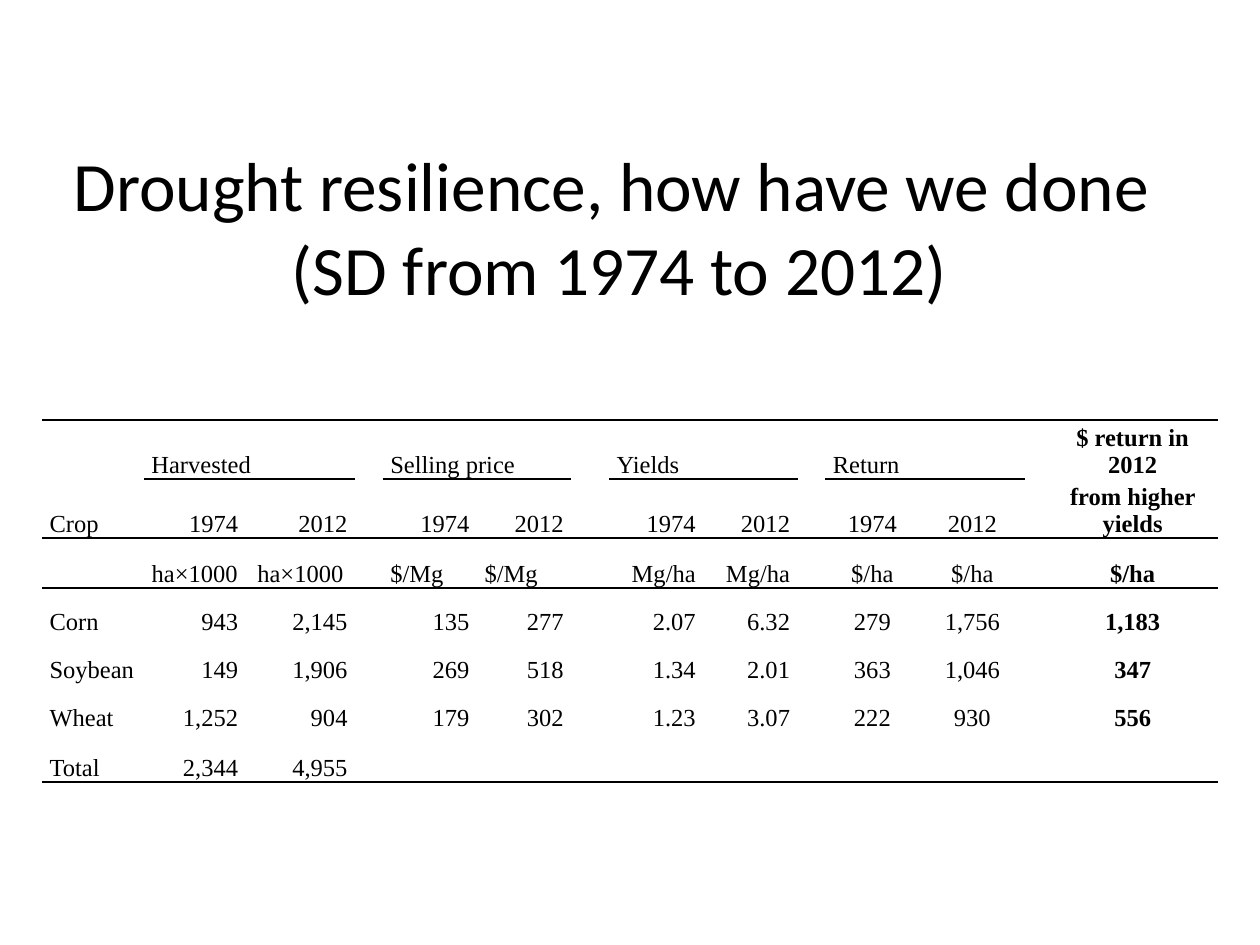
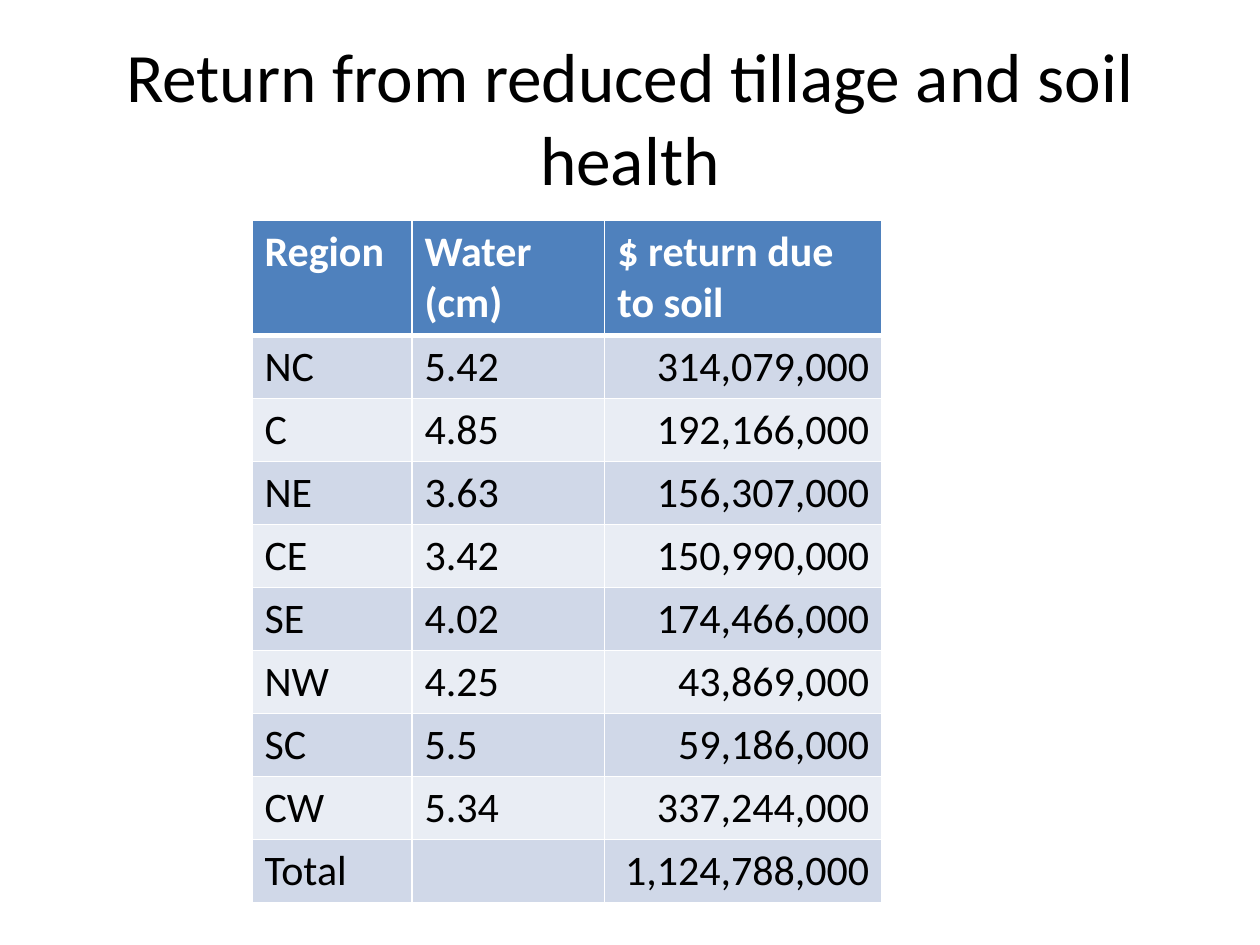
from lxml import etree
from pptx import Presentation
from pptx.dml.color import RGBColor
from pptx.enum.text import MSO_ANCHOR, PP_ALIGN
from pptx.oxml.ns import qn
from pptx.util import Inches, Pt

ALIGN = {"l": PP_ALIGN.LEFT, "c": PP_ALIGN.CENTER, "r": PP_ALIGN.RIGHT}
TOP, MIDDLE, BOTTOM = MSO_ANCHOR.TOP, MSO_ANCHOR.MIDDLE, MSO_ANCHOR.BOTTOM

COLORS = {
    "ink": "000000",
    "paper": "FFFFFF",
    "header": "4F81BD",
    "band_dark": "D0D8E8",
    "band_light": "E9EDF4",
}
SANS, SERIF = "Calibri", "Times New Roman"
TITLE_SIZE = 39.6
PLAIN_TABLE_STYLE = "{2D5ABB26-0587-4C30-8999-92F81FD0307C}"

SLIDE_WIDTH, SLIDE_HEIGHT = Inches(10), Inches(7.5)
GRID_COLUMNS, GRID_ROWS = 120, 90

CROP_WIDTHS = [0.81, 0.81, 0.87, 0.22, 0.75, 0.75, 0.3,
               0.75, 0.75, 0.22, 0.75, 0.84, 0.18, 1.35]
CROP_HEIGHTS = [0.43, 0.43, 0.4, 0.38, 0.38, 0.38, 0.4]
CROP_COLUMNS = [0, 1, 2, 4, 5, 7, 8, 10, 11, 13]
GROUPED_COLUMNS = CROP_COLUMNS[1:-1]
MERGED_STARTS = [1, 4]
NUMBER_ALIGN = "lrrrrrrccc"
CROP_ROWS = [
    ("lllllllllc", ["", "Harvested", "", "Selling price", "", "Yields", "",
                    "Return", "", "$ return in 2012"]),
    (NUMBER_ALIGN, ["Crop"] + ["1974", "2012"] * 4 + ["from higher yields"]),
    ("lccllrrccc", ["", "ha×1000", "ha×1000", "$/Mg", "$/Mg", "Mg/ha", "Mg/ha",
                    "$/ha", "$/ha", "$/ha"]),
    (NUMBER_ALIGN, ["Corn", "943", "2,145", "135", "277", "2.07", "6.32",
                    "279", "1,756", "1,183"]),
    (NUMBER_ALIGN, ["Soybean", "149", "1,906", "269", "518", "1.34", "2.01",
                    "363", "1,046", "347"]),
    (NUMBER_ALIGN, ["Wheat", "1,252", "904", "179", "302", "1.23", "3.07",
                    "222", "930", "556"]),
    (NUMBER_ALIGN, ["Total", "2,344", "4,955"]),
]

REGION_WIDTHS = [1.27, 1.53, 2.2]
REGION_ROWS = [
    ("Region", "Water (cm)", "$ return due to soil"),
    ("NC", "5.42", "314,079,000"),
    ("C", "4.85", "192,166,000"),
    ("NE", "3.63", "156,307,000"),
    ("CE", "3.42", "150,990,000"),
    ("SE", "4.02", "174,466,000"),
    ("NW", "4.25", "43,869,000"),
    ("SC", "5.5", "59,186,000"),
    ("CW", "5.34", "337,244,000"),
    ("Total", "", "1,124,788,000"),
]
REGION_HEIGHTS = [0.91] + [0.5] * (len(REGION_ROWS) - 1)


def grid_box(column, row, columns, rows):
    unit_x, unit_y = SLIDE_WIDTH / GRID_COLUMNS, SLIDE_HEIGHT / GRID_ROWS
    return (round(column * unit_x), round(row * unit_y),
            round(columns * unit_x), round(rows * unit_y))


def write(frame, text, font, size, color, align, bold=False):
    frame.text = text
    for paragraph in frame.paragraphs:
        paragraph.alignment = ALIGN[align]
        for run in paragraph.runs:
            run.font.name = font
            run.font.size = Pt(size)
            run.font.bold = bold
            run.font.color.rgb = RGBColor.from_string(COLORS[color])


def add_title(slide, box, text):
    frame = slide.shapes.add_textbox(*box).text_frame
    frame.word_wrap = True
    frame.vertical_anchor = MIDDLE
    write(frame, text, SANS, TITLE_SIZE, "ink", "c")


def add_plain_table(slide, box, widths, heights):
    table = slide.shapes.add_table(len(heights), len(widths), *box).table
    table.first_row = table.horz_banding = False
    table._tbl.tblPr.find(qn("a:tableStyleId")).text = PLAIN_TABLE_STYLE
    for column, share in zip(table.columns, widths):
        column.width = round(box[2] * share / sum(widths))
    for row, share in zip(table.rows, heights):
        row.height = round(box[3] * share / sum(heights))
    return table


def rule_cell(cell, color, **edges):
    properties = cell._tc.get_or_add_tcPr()
    for side in "LRTB":
        if side in edges:
            line = etree.SubElement(properties, qn(f"a:ln{side}"), w=str(Pt(edges[side])))
            fill = etree.SubElement(line, qn("a:solidFill"))
            etree.SubElement(fill, qn("a:srgbClr"), val=COLORS[color])


def crop_rules(row, column):
    grouped = column in GROUPED_COLUMNS
    edges = {}
    if row in (0, 2) or (row == 1 and grouped):
        edges["T"] = 1
    if row in (1, len(CROP_ROWS) - 1) or (row == 0 and grouped):
        edges["B"] = 1
    return edges


def add_crop_table(slide, box):
    table = add_plain_table(slide, box, CROP_WIDTHS, CROP_HEIGHTS)
    for start in MERGED_STARTS:
        table.cell(0, start).merge(table.cell(0, start + 1))
    for row, (aligns, values) in enumerate(CROP_ROWS):
        for column in range(len(CROP_WIDTHS)):
            cell = table.cell(row, column)
            cell.margin_left = cell.margin_right = Inches(0.06)
            cell.margin_top = cell.margin_bottom = 0
            cell.vertical_anchor = BOTTOM
            rule_cell(cell, "ink", **crop_rules(row, column))
            cell.fill.background()
        for column, align, value in zip(CROP_COLUMNS, aligns, values):
            if value:
                write(table.cell(row, column).text_frame, value, SERIF, 14, "ink",
                      align, bold=column == CROP_COLUMNS[-1])


def add_region_table(slide, box):
    table = add_plain_table(slide, box, REGION_WIDTHS, REGION_HEIGHTS)
    for row, values in enumerate(REGION_ROWS):
        header = row == 0
        band = "header" if header else ("band_light", "band_dark")[row % 2]
        for column, value in enumerate(values):
            cell = table.cell(row, column)
            cell.vertical_anchor = TOP
            rule_cell(cell, "paper", L=1, R=1, T=3 if row == 1 else 1,
                      B=3 if header else 1)
            cell.fill.solid()
            cell.fill.fore_color.rgb = RGBColor.from_string(COLORS[band])
            if value:
                align = "r" if column == 2 and not header else "l"
                write(cell.text_frame, value, SANS, 24,
                      "paper" if header else "ink", align, bold=header)


def add_slide(deck):
    slide = deck.slides.add_slide(deck.slide_layouts[6])
    slide.background.fill.solid()
    slide.background.fill.fore_color.rgb = RGBColor.from_string(COLORS["paper"])
    return slide


def build_drought_slide(deck):
    slide = add_slide(deck)
    add_title(slide, grid_box(5, 14, 108, 15),
              "Drought resilience, how have we done \v(SD from 1974 to 2012)")
    add_crop_table(slide, grid_box(4, 40, 112, 33.6))


def build_tillage_slide(deck):
    slide = add_slide(deck)
    add_title(slide, grid_box(6, 3.6, 108, 15),
              "Return from reduced tillage and soil health")
    add_region_table(slide, grid_box(24, 21, 60, 65))


def main():
    deck = Presentation()
    deck.slide_width, deck.slide_height = SLIDE_WIDTH, SLIDE_HEIGHT
    build_drought_slide(deck)
    build_tillage_slide(deck)
    deck.save("out.pptx")


if __name__ == "__main__":
    main()
